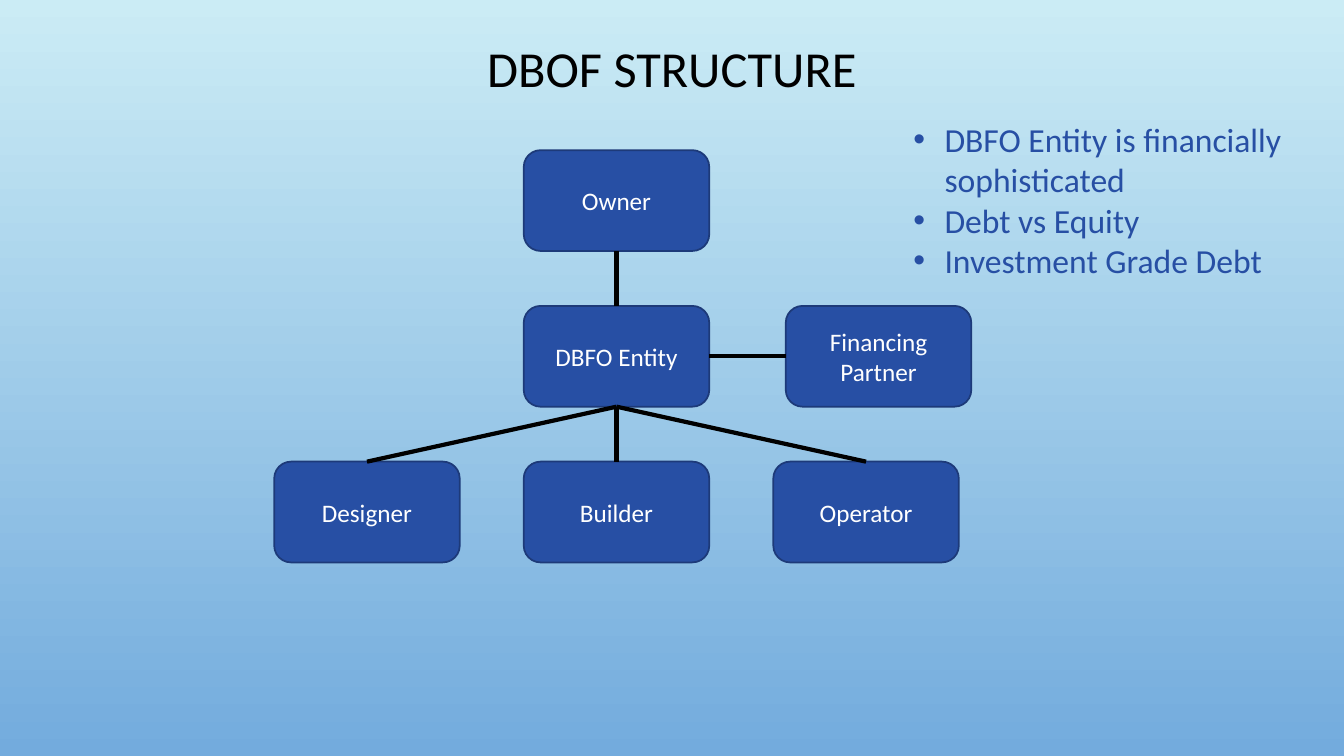
from lxml import etree
from pptx import Presentation
from pptx.dml.color import RGBColor
from pptx.enum.shapes import MSO_CONNECTOR, MSO_SHAPE
from pptx.enum.text import MSO_ANCHOR, PP_ALIGN
from pptx.oxml.ns import qn
from pptx.util import Inches, Pt

STRAIGHT = MSO_CONNECTOR.STRAIGHT
ROUNDED = MSO_SHAPE.ROUNDED_RECTANGLE
MIDDLE = MSO_ANCHOR.MIDDLE
CENTER = PP_ALIGN.CENTER
TOP, LEFT, BOTTOM, RIGHT = range(4)  # connection sites of a box

THEME = {
    "font": "Calibri",
    "sky": RGBColor.from_string("CBECF5"),
    "horizon": RGBColor.from_string("73ABDD"),
    "blue": RGBColor.from_string("274FA4"),
    "edge": RGBColor.from_string("1D3A79"),
    "black": RGBColor.from_string("000000"),
    "white": RGBColor.from_string("FFFFFF"),
    "title": Pt(36),
    "points": Pt(24),
    "label": Pt(18),
}

# Chart grid, in inches
GRID_LEFT, GRID_TOP = 2.72, 1.49
COLUMN_STEP, ROW_STEP = 2.475, 1.545
BOX_WIDTH, BOX_HEIGHT = 1.84, 1
BULLET_INDENT = Inches(0.31)


def style_text(paragraph, size, color):
    for run in paragraph.runs:
        run.font.name = THEME["font"]
        run.font.size = THEME[size]
        run.font.color.rgb = THEME[color]


deck = Presentation()
deck.slide_width, deck.slide_height = Inches(13.33), Inches(7.5)
slide = deck.slides.add_slide(deck.slide_layouts[6])

# Background, light at the top
backdrop = slide.background.fill
backdrop.gradient()
backdrop.gradient_angle = 270
for stop, color in zip(backdrop.gradient_stops, ("sky", "horizon")):
    stop.color.rgb = THEME[color]

# Title
title = slide.shapes.add_textbox(
    Inches(1), Inches(-0.17), Inches(11.33), Inches(1.75)).text_frame
title.word_wrap = True
title.vertical_anchor = MIDDLE
title.text = "DBOF STRUCTURE"
heading = title.paragraphs[0]
heading.alignment = CENTER
heading.line_spacing = 0.9
style_text(heading, "title", "black")

# Parties, each at a column and row of the grid
parties = {}
for party, column, row in (
    ("Owner", 1, 0),
    ("DBFO Entity", 1, 1),
    ("Operator", 2, 2),
    ("Builder", 1, 2),
    ("Designer", 0, 2),
    ("Financing Partner", 2.05, 1),
):
    box = slide.shapes.add_shape(
        ROUNDED,
        Inches(GRID_LEFT + column * COLUMN_STEP),
        Inches(GRID_TOP + row * ROW_STEP),
        Inches(BOX_WIDTH), Inches(BOX_HEIGHT))
    box.shadow.inherit = False
    box.fill.solid()
    box.fill.fore_color.rgb = THEME["blue"]
    box.line.color.rgb = THEME["edge"]
    box.line.width = Pt(1.25)
    box.text_frame.word_wrap = True
    box.text_frame.vertical_anchor = MIDDLE
    box.text_frame.text = party
    label = box.text_frame.paragraphs[0]
    label.alignment = CENTER
    style_text(label, "label", "white")
    parties[party] = box

# Links between the parties
for source, source_site, target, target_site in (
    ("Owner", BOTTOM, "DBFO Entity", TOP),
    ("DBFO Entity", BOTTOM, "Builder", TOP),
    ("DBFO Entity", BOTTOM, "Designer", TOP),
    ("DBFO Entity", BOTTOM, "Operator", TOP),
    ("DBFO Entity", RIGHT, "Financing Partner", LEFT),
):
    link = slide.shapes.add_connector(STRAIGHT, 0, 0, 0, 0)
    link.begin_connect(parties[source], source_site)
    link.end_connect(parties[target], target_site)
    link.line.color.rgb = THEME["black"]
    link.line.width = Pt(3)
    etree.SubElement(link._element.spPr, qn("a:effectLst"))

# Key points
points = slide.shapes.add_textbox(
    Inches(8.96), Inches(1.13), Inches(3.94), Inches(1.72)).text_frame
points.word_wrap = True
points.text = "\n".join((
    "DBFO Entity is financially sophisticated",
    "Debt vs Equity",
    "Investment Grade Debt",
))
for point in points.paragraphs:
    properties = point._p.get_or_add_pPr()
    properties.set("marL", str(BULLET_INDENT))
    properties.set("indent", str(-BULLET_INDENT))
    etree.SubElement(properties, qn("a:buFont"), typeface="Arial")
    etree.SubElement(properties, qn("a:buChar"), char="•")
    style_text(point, "points", "blue")

deck.save("out.pptx")
